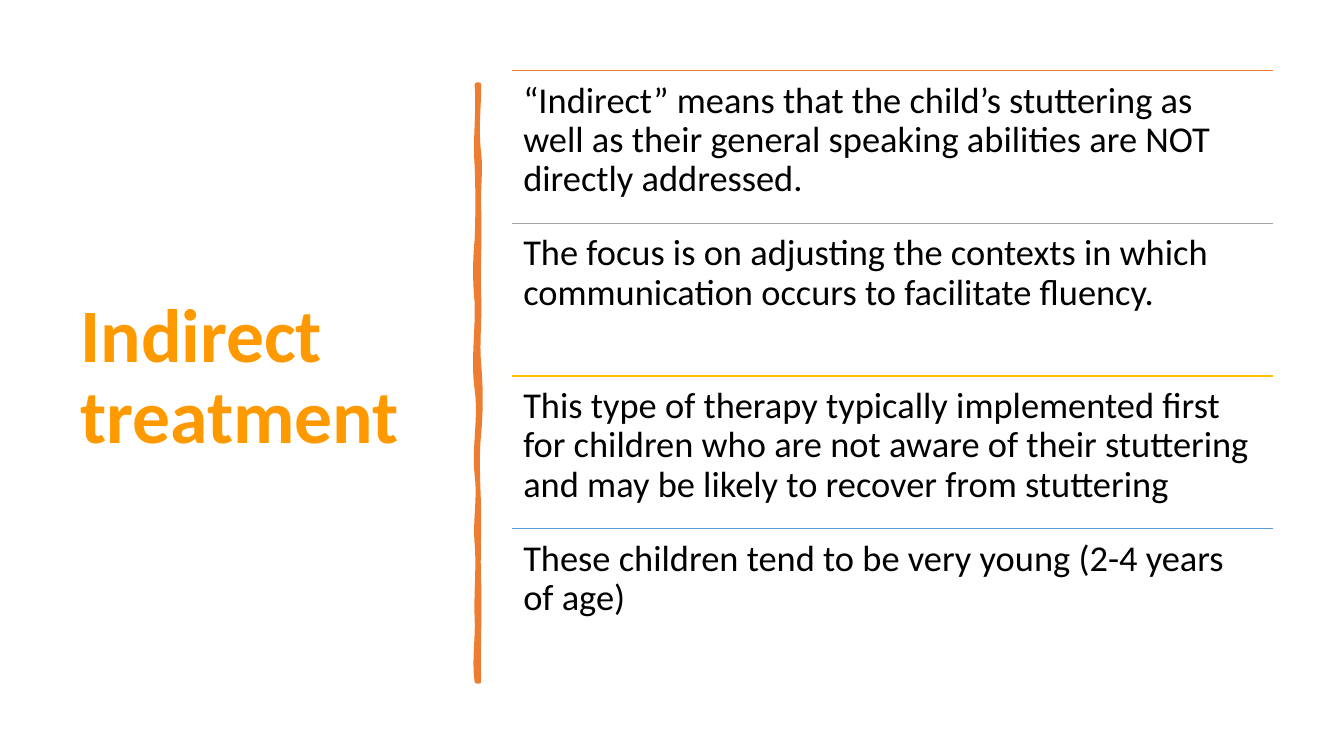
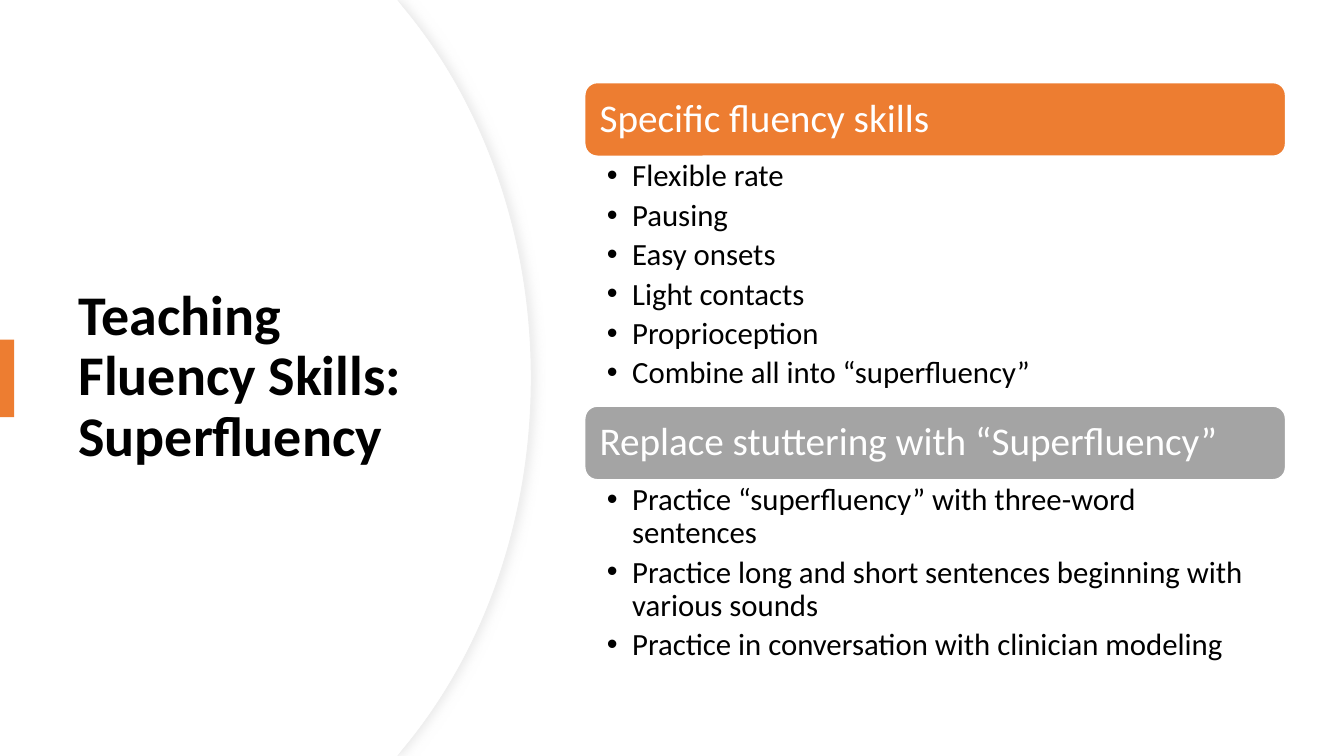
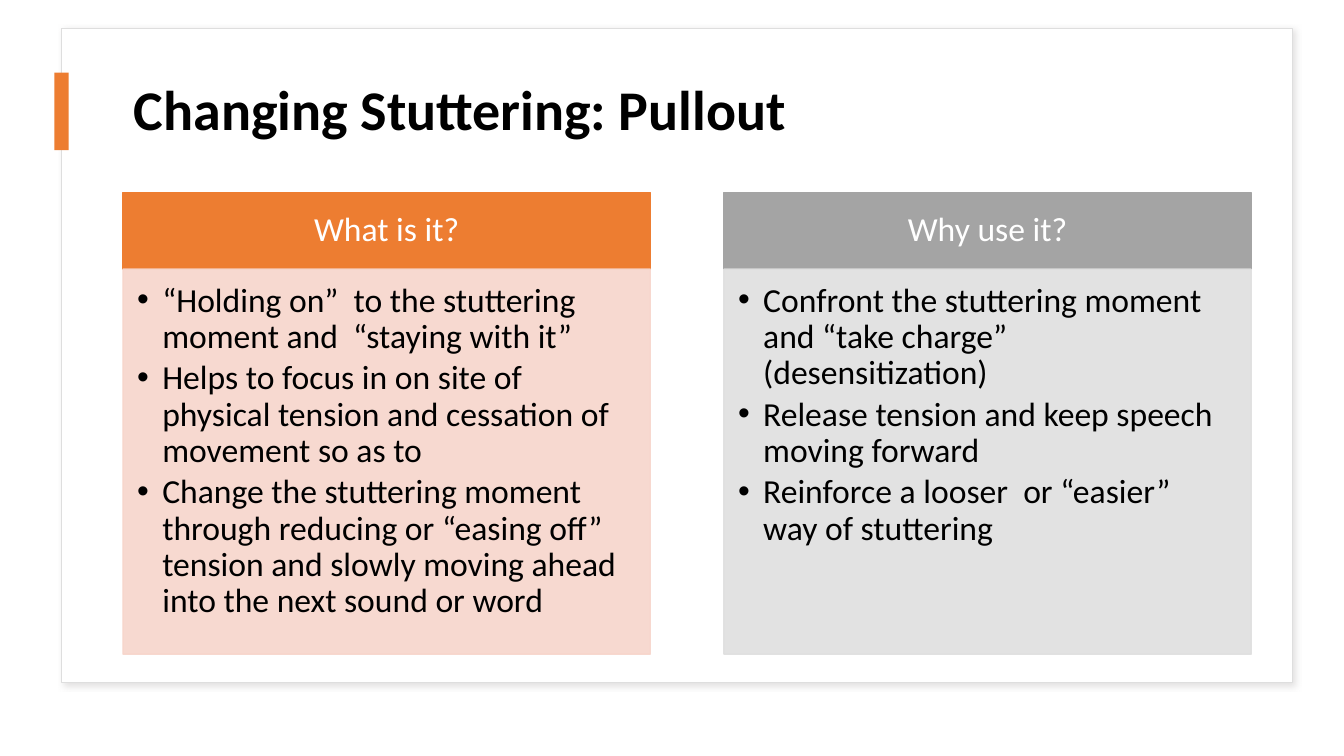
from dataclasses import dataclass

from lxml import etree
from pptx import Presentation
from pptx.dml.color import RGBColor
from pptx.enum import shapes, text
from pptx.oxml.ns import qn
from pptx.util import Inches, Pt


@dataclass(frozen=True)
class Theme:
    font: str = "Calibri"
    black: str = "000000"
    white: str = "FFFFFF"
    title_orange: str = "FF9900"
    orange: str = "ED7D31"
    gray: str = "A4A4A4"
    pale_orange: str = "F7D5CB"
    pale_gray: str = "DFDFDF"
    arc_line: str = "EFEFEF"
    arc_shadow: str = "D8D8D8"
    card_line: str = "DEDEDE"
    card_shadow: str = "C5C2C2"
    rules: tuple = ("ED7D31", "A5A5A5", "FFC000", "599BD5")
    big_title: int = 54
    title: int = 40
    banner: int = 28
    statement: int = 26
    column: int = 24
    detail: int = 22
    line_spacing: float = 0.9


THEME = Theme()
SLIDE_WIDTH, SLIDE_HEIGHT = 13.33, 7.5
TITLE_MARGINS = (0.1, 0.05, 0.1, 0.05)


def add_child(parent, tag, **attributes):
    child = etree.SubElement(parent, qn(tag))
    for name, value in attributes.items():
        child.set(name, str(value))
    return child


def set_values(target, values):
    for name, value in values.items():
        setattr(target, name, value)


def paint(shape, fill, line=None, line_width=1, opacity=100):
    shape.shadow.inherit = False
    shape.fill.solid()
    shape.fill.fore_color.rgb = RGBColor.from_string(fill)
    if line is None:
        shape.line.fill.background()
    else:
        shape.line.color.rgb = RGBColor.from_string(line)
        shape.line.width = Pt(line_width)
    if opacity < 100:
        for color in shape._element.spPr.iter(qn("a:srgbClr")):
            add_child(color, "a:alpha", val=opacity * 1000)


def add_shadow(shape, color, blur, distance, degrees):
    effects = shape._element.spPr.find(qn("a:effectLst"))
    shadow = add_child(effects, "a:outerShdw", blurRad=Pt(blur), dist=Pt(distance),
                       dir=degrees * 60000, algn="ctr", rotWithShape=0)
    add_child(add_child(shadow, "a:srgbClr", val=color), "a:alpha", val=50000)


def add_bullet(paragraph):
    properties = paragraph._p.get_or_add_pPr()
    properties.set("marL", str(Inches(0.25)))
    properties.set("indent", str(-Inches(0.25)))
    add_child(add_child(properties, "a:buClr"), "a:srgbClr", val=THEME.black)
    add_child(properties, "a:buFont", typeface="Arial")
    add_child(properties, "a:buChar", char="•")


def write(shape, lines, size, margins, color=THEME.black, bold=False, bullets=False,
          gap=0, anchor=text.MSO_ANCHOR.TOP, align=text.PP_ALIGN.LEFT):
    """Fill a shape with paragraphs; margins run left, top, right, bottom."""
    frame = shape.text_frame
    sides = ("margin_left", "margin_top", "margin_right", "margin_bottom")
    set_values(frame, {"word_wrap": True, "vertical_anchor": anchor,
                       **dict(zip(sides, map(Inches, margins)))})
    for index, line in enumerate(lines):
        paragraph = frame.add_paragraph() if index else frame.paragraphs[0]
        if bullets:
            add_bullet(paragraph)
        set_values(paragraph, {"alignment": align, "line_spacing": THEME.line_spacing,
                               "space_before": Pt(gap if index else 0)})
        run = paragraph.add_run()
        run.text = line
        set_values(run.font, {"name": THEME.font, "size": Pt(size), "bold": bold})
        run.font.color.rgb = RGBColor.from_string(color)


def add_text(slide, box, lines, size, margins, **options):
    write(slide.shapes.add_textbox(*map(Inches, box)), lines, size, margins, **options)


def add_title(slide, box, title, size=THEME.title, color=THEME.black):
    add_text(slide, box, [title], size, TITLE_MARGINS, color=color, bold=True,
             anchor=text.MSO_ANCHOR.MIDDLE)


def add_block(slide, box, fill, kind=shapes.MSO_SHAPE.RECTANGLE, **options):
    shape = slide.shapes.add_shape(kind, *map(Inches, box))
    paint(shape, fill, **options)
    return shape


def add_marker(slide, left, top):
    add_block(slide, (left, top, 0.14, 0.77), THEME.orange)


def add_rule(slide, left, top, width, color):
    rule = slide.shapes.add_connector(shapes.MSO_CONNECTOR.STRAIGHT, Inches(left),
                                      Inches(top), Inches(left + width), Inches(top))
    rule.line.color.rgb = RGBColor.from_string(color)
    rule.line.width = Pt(1)
    add_child(rule._element.spPr, "a:effectLst")


def add_outline(slide, start, segments, fill, **options):
    """Closed outline; a segment of one point is a line, of three points a cubic curve."""
    builder = slide.shapes.build_freeform(*map(Inches, start))
    builder.add_line_segments([tuple(map(Inches, point))
                               for segment in segments for point in segment])
    shape = builder.convert_to_shape()
    contour = next(shape._element.iter(qn("a:path")))
    lines = iter(contour.findall(qn("a:lnTo")))
    for segment in segments:
        steps = [next(lines) for _ in segment]
        if len(steps) == 3:
            bezier = etree.Element(qn("a:cubicBezTo"))
            steps[0].addprevious(bezier)
            for step in steps:
                bezier.append(step[0])
                contour.remove(step)
    add_child(contour, "a:close")
    paint(shape, fill, **options)
    return shape


def wavy_edge(x, y, waves):
    """Curves along a vertical edge; each wave is its end and two sideways pulls."""
    for end, first_pull, second_pull in waves:
        third = (end - y) / 3
        yield (x + first_pull, y + third), (x + second_pull, end - third), (x, end)
        y = end


def add_brush_stroke(slide):
    left, right, top, bottom = 4.73, 4.75, 0.84, 6.76
    down = ((1.52, 0, -0.03), (2.08, 0.02, -0.01), (2.94, 0.01, -0.01),
            (3.62, 0.01, -0.02), (4.3, 0.02, 0.02), (5.16, -0.03, 0),
            (5.78, 0, -0.01), (bottom, 0.01, -0.01))
    up = ((6.13, -0.03, 0.01), (5.39, -0.01, 0.02), (4.71, -0.02, 0.03),
          (3.86, -0.03, 0.04), (3, -0.04, 0.01), (2.38, -0.02, -0.02),
          (1.64, 0.01, 0.01), (top, -0.02, 0.02))
    segments = [*wavy_edge(right, top, down), ((left, bottom),), *wavy_edge(left, bottom, up)]
    add_outline(slide, (right, top), segments, THEME.orange,
                line=THEME.orange, line_width=3.25)


def add_arc_panel(slide, bulge, **options):
    """White panel from the left edge whose right side bulges out to the given x."""
    shoulder, control = bulge - 1.26, bulge - 0.48
    segments = [
        ((3.94, 0),), ((shoulder, 0.08),),
        ((control, 1.02), (bulge, 2.32), (bulge, SLIDE_HEIGHT / 2)),
        ((bulge, 5.18), (control, 6.48), (shoulder, 7.42)),
        ((3.94, SLIDE_HEIGHT),), ((0, SLIDE_HEIGHT),),
    ]
    return add_outline(slide, (0, 0), segments, THEME.white, **options)


def build_indirect_treatment(slide):
    add_title(slide, (0.7, 0.7, 3.74, 6.11), "Indirect treatment",
              THEME.big_title, THEME.title_orange)
    add_brush_stroke(slide)
    statements = (
        "“Indirect” means that the child’s stuttering as well as their general speaking "
        "abilities are NOT directly addressed.",
        "The focus is on adjusting the contexts in which communication occurs to "
        "facilitate fluency.",
        "This type of therapy typically implemented first for children who are not aware "
        "of their stuttering and may be likely to recover from stuttering",
        "These children tend to be very young (2-4 years of age)",
    )
    left, width, row_height = 5.08, 7.55, 6.06 / len(statements)
    for row, (statement, color) in enumerate(zip(statements, THEME.rules)):
        top = 0.7 + row * row_height
        add_rule(slide, left, top, width, color)
        add_text(slide, (left, top, width, row_height), [statement],
                 THEME.statement, (0.11,) * 4)


def build_superfluency(slide):
    panel = add_arc_panel(slide, 5.27, line=THEME.arc_line, line_width=0.75)
    add_shadow(panel, THEME.arc_shadow, 7, 3, 0)
    add_arc_panel(slide, 5.26)
    add_title(slide, (0.68, 1.27, 3.94, 4.95), "Teaching Fluency Skills: Superfluency")
    add_marker(slide, 0, 3.37)
    sections = (
        ("Specific fluency skills", THEME.orange, 2.48,
         ("Flexible rate", "Pausing", "Easy onsets", "Light contacts", "Proprioception",
          "Combine all into “superfluency”")),
        ("Replace stuttering with “Superfluency”", THEME.gray, 1.93,
         ("Practice “superfluency” with three-word sentences",
          "Practice long and short sentences beginning with various sounds",
          "Practice in conversation with clinician modeling")),
    )
    left, top, width, banner_height = 5.8, 0.82, 6.95, 0.73
    for heading, color, list_height, details in sections:
        banner = add_block(slide, (left, top, width, banner_height), color,
                           shapes.MSO_SHAPE.ROUNDED_RECTANGLE, line=THEME.white)
        banner.adjustments[0] = 0.17
        write(banner, [heading], THEME.banner, (0.11, 0.12, 0.12, 0.12), color=THEME.white,
              anchor=text.MSO_ANCHOR.MIDDLE)
        top += banner_height
        add_text(slide, (left, top, width, list_height), details, THEME.detail,
                 (0.22, 0.04, 0.22, 0.04), bullets=True, gap=4.4)
        top += list_height


def build_pullout(slide):
    card = add_block(slide, (0.61, 0.28, 12.21, 6.49), THEME.white, line=THEME.card_line)
    add_shadow(card, THEME.card_shadow, 4, 3, 45)
    add_title(slide, (1.23, 0.56, 11.19, 1.11), "Changing Stuttering: Pullout")
    add_marker(slide, 0.54, 0.72)
    columns = (
        ("What is it?", THEME.orange, THEME.pale_orange,
         ("“Holding on”  to the stuttering moment and  “staying with it”",
          "Helps to focus in on site of physical tension and cessation of movement so as to",
          "Change the stuttering moment through reducing or “easing off” tension and slowly "
          "moving ahead  into the next sound or word")),
        ("Why use it?", THEME.gray, THEME.pale_gray,
         ("Confront the stuttering moment and “take charge” (desensitization)",
          "Release tension and keep speech moving forward",
          "Reinforce a looser  or “easier” way of stuttering")),
    )
    width, gap, top, header_height = 5.23, 0.73, 1.91, 0.76
    for index, (heading, color, pale, points) in enumerate(columns):
        left = 1.22 + index * (width + gap)
        header = add_block(slide, (left, top, width, header_height), color, line=color)
        write(header, [heading], THEME.column, (0.19, 0.11, 0.19, 0.11), color=THEME.white,
              anchor=text.MSO_ANCHOR.MIDDLE, align=text.PP_ALIGN.CENTER)
        body = add_block(slide, (left, top + header_height, width, 3.82), pale,
                         line=pale, opacity=90)
        write(body, points, THEME.column, (0.14, 0.14, 0.19, 0.21), bullets=True, gap=3.6)


def main():
    presentation = Presentation()
    set_values(presentation, {"slide_width": Inches(SLIDE_WIDTH),
                              "slide_height": Inches(SLIDE_HEIGHT)})
    blank = presentation.slide_layouts[6]
    for build in (build_indirect_treatment, build_superfluency, build_pullout):
        build(presentation.slides.add_slide(blank))
    presentation.save("out.pptx")


if __name__ == "__main__":
    main()
